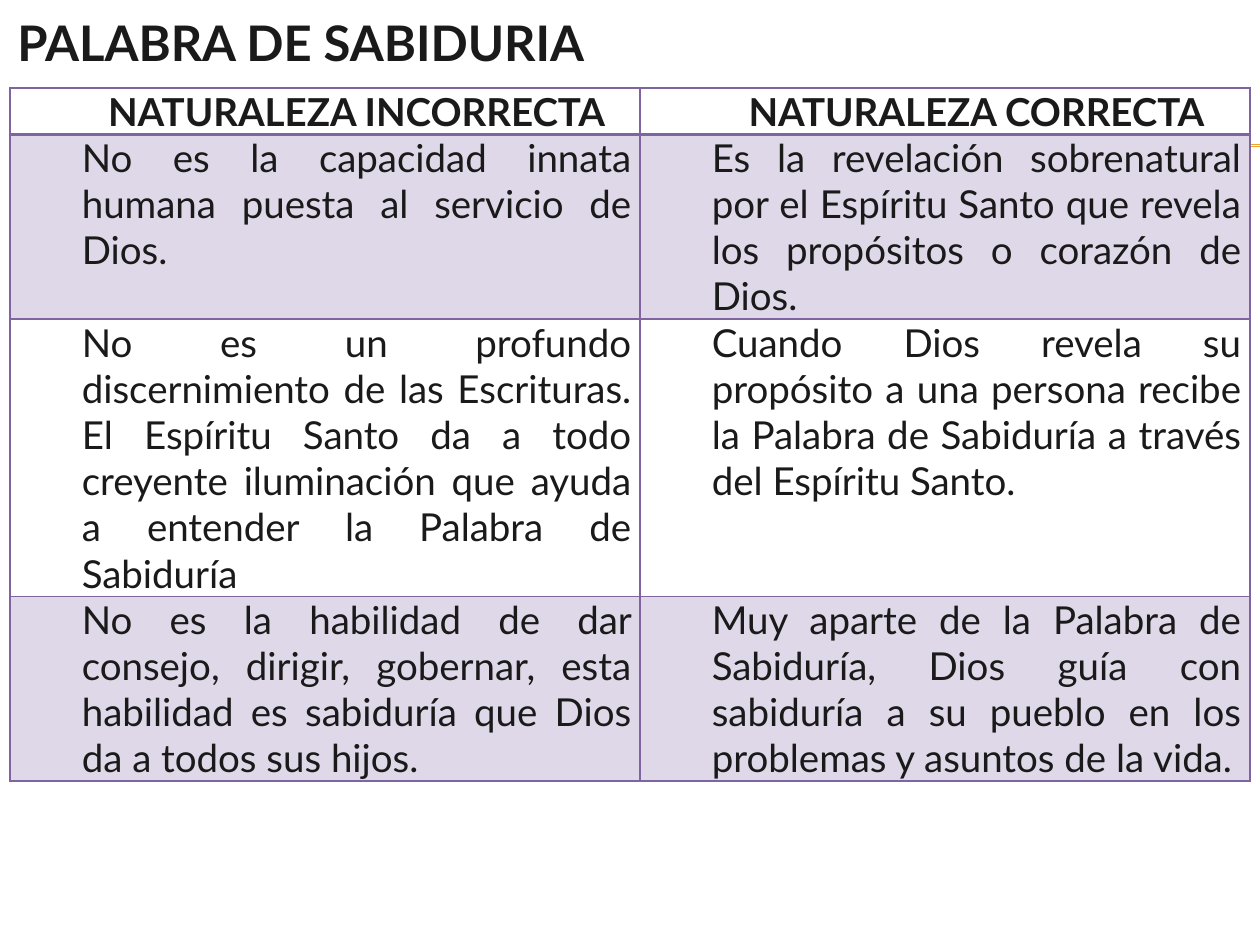
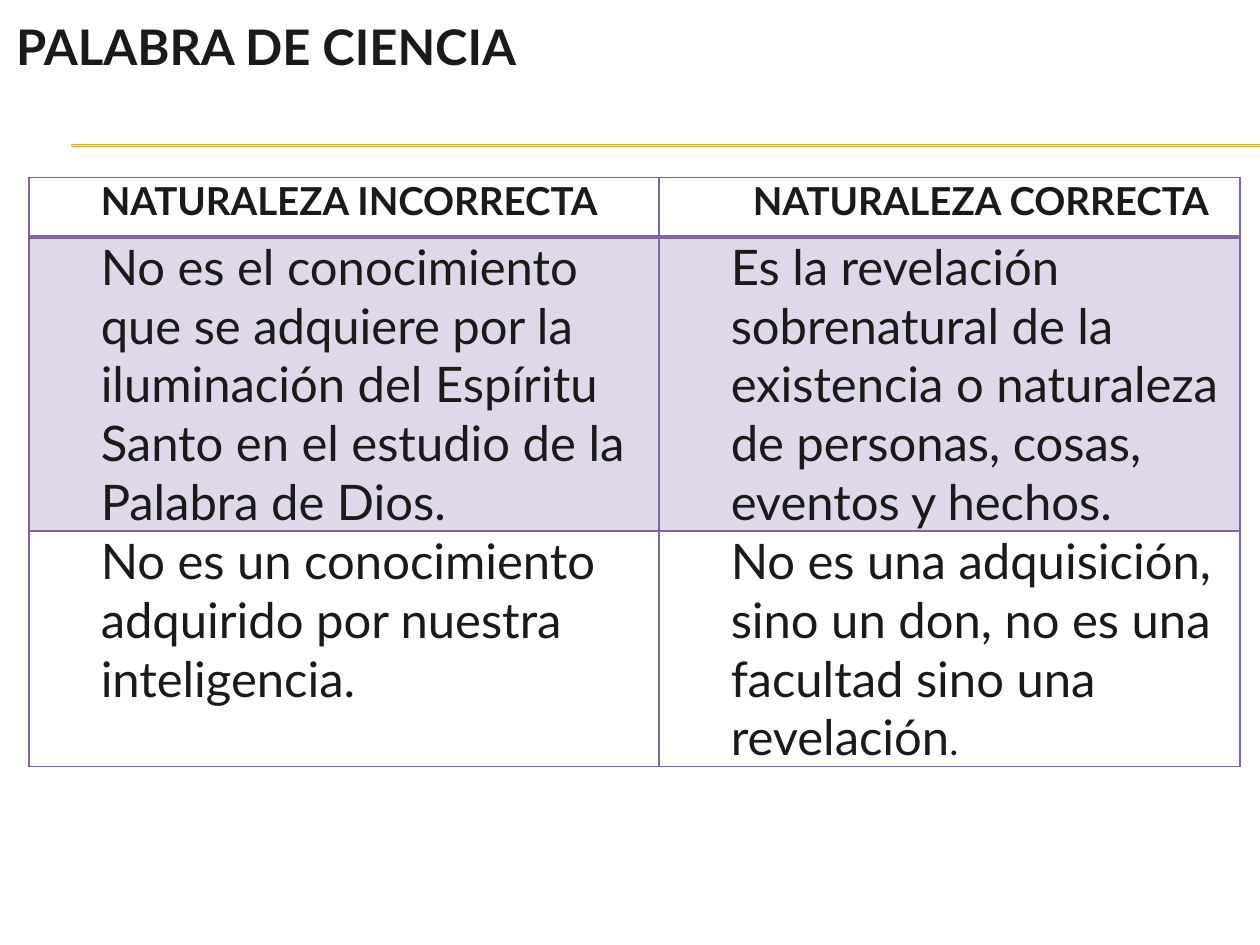
from lxml.etree import SubElement
from pptx import Presentation
from pptx.dml.color import RGBColor
from pptx.enum.shapes import MSO_CONNECTOR
from pptx.enum.text import MSO_ANCHOR, MSO_AUTO_SIZE, PP_ALIGN
from pptx.oxml.ns import qn
from pptx.util import Inches, Pt

INK = RGBColor(0x1A, 0x1A, 0x1A)
PURPLE = RGBColor(0x80, 0x64, 0xA2)
LILAC = RGBColor(0xDF, 0xD8, 0xE8)
AMBER = RGBColor(0xF0, 0xA2, 0x2E)
FONT = "Lato"
WIDTH, HEIGHT = Inches(10), Inches(7.5)
COLUMN, ROW = WIDTH / 100, HEIGHT / 100
TITLE_SIZE, HEADER_SIZE = 28, 22
THIN, THICK = Pt(1), Pt(2.25)
LEFT, CENTER, JUSTIFY = PP_ALIGN.LEFT, PP_ALIGN.CENTER, PP_ALIGN.JUSTIFY
HEADERS = ("NATURALEZA INCORRECTA", "NATURALEZA CORRECTA")


def grid(columns, rows):
    return round(columns * COLUMN), round(rows * ROW)


def line_height(size):
    return Pt(size * 1.2)


def add_text(para, text, size=HEADER_SIZE, bold=False, align=LEFT):
    para.alignment = align
    span = para.add_run()
    span.text = text
    span.font.name = FONT
    span.font.size = Pt(size)
    span.font.bold = bold
    span.font.color.rgb = INK


def add_rules(page):
    """Draw the double amber rule that runs off the right edge."""
    for row in (15.33, 15.47):
        rule = page.shapes.add_connector(
            MSO_CONNECTOR.STRAIGHT, *grid(5.6, row), *grid(100, row))
        rule.line.color.rgb = AMBER
        rule.line.width = Pt(0.75)
        SubElement(rule._element.spPr, qn("a:effectLst"))


def add_title(page, text, box):
    left, top, width, height = box
    shape = page.shapes.add_textbox(*grid(left, top), *grid(width, height))
    frame = shape.text_frame
    frame.word_wrap = False
    frame.auto_size = MSO_AUTO_SIZE.SHAPE_TO_FIT_TEXT
    frame.vertical_anchor = MSO_ANCHOR.MIDDLE
    add_text(frame.paragraphs[0], text, size=TITLE_SIZE, bold=True, align=JUSTIFY)


def set_borders(cell, top, bottom):
    properties = cell._tc.get_or_add_tcPr()
    for side, width in (("L", THIN), ("R", THIN), ("T", top), ("B", bottom)):
        edge = SubElement(properties, qn(f"a:ln{side}"), w=str(width))
        paint = SubElement(edge, qn("a:solidFill"))
        SubElement(paint, qn("a:srgbClr"), val=str(PURPLE))


def format_cell(cell, row):
    """Set insets, indent, borders and the lilac band of odd rows."""
    cell.margin_left = cell.margin_right = round(0.7 * COLUMN)
    cell.margin_top = cell.margin_bottom = 0
    indent = cell.text_frame.paragraphs[0]._p.get_or_add_pPr()
    indent.set("marL", str(round(5 * COLUMN)))
    indent.set("indent", "0")
    set_borders(cell, THICK if row == 1 else THIN, THICK if row == 0 else THIN)
    if row % 2:
        cell.fill.solid()
        cell.fill.fore_color.rgb = LILAC
    else:
        cell.fill.background()


def add_comparison(page, box, header_height, header_aligns, body, size, align, lines):
    """Fill a two-column table; lines counts the text lines of each body row."""
    left, top, width = box
    heights = [header_height] + [count * line_height(size) for count in lines]
    frame = page.shapes.add_table(
        len(heights), 2, *grid(left, top), round(width * COLUMN), sum(heights))
    table = frame.table
    table.first_row = table.horz_banding = False
    table.columns[0].width = round(50 * COLUMN)
    table.columns[1].width = round((width - 50) * COLUMN)
    for row, height in enumerate(heights):
        table.rows[row].height = height
    for column, (text, header_align) in enumerate(zip(HEADERS, header_aligns)):
        cell = table.cell(0, column)
        add_text(cell.text_frame.paragraphs[0], text, bold=True, align=header_align)
        format_cell(cell, 0)
    for row, texts in enumerate(body, start=1):
        for column, text in enumerate(texts):
            cell = table.cell(row, column)
            add_text(cell.text_frame.paragraphs[0], text, size=size, align=align)
            format_cell(cell, row)
    return table


def new_page(deck, title, title_box):
    page = deck.slides.add_slide(deck.slide_layouts[6])
    add_rules(page)
    add_title(page, title, title_box)
    return page


def build_wisdom(deck):
    page = new_page(deck, "PALABRA DE SABIDURIA", (0.4, 0.67, 50.4, 7.6))
    body = (
        ("No es la capacidad innata humana puesta al servicio de Dios. ",
         "Es la revelación sobrenatural por el Espíritu Santo que revela los "
         "propósitos o corazón de Dios."),
        ("No es un profundo discernimiento de las Escrituras. El Espíritu Santo da "
         "a todo creyente iluminación que ayuda a entender la Palabra de Sabiduría",
         "Cuando Dios revela su propósito a una persona recibe la Palabra de "
         "Sabiduría a través del Espíritu Santo."),
        ("No es la habilidad de dar consejo, dirigir, gobernar, esta habilidad es "
         "sabiduría que Dios da a todos sus hijos.",
         "Muy aparte de la Palabra de Sabiduría, Dios guía con sabiduría a su "
         "pueblo en los problemas y asuntos de la vida."),
    )
    add_comparison(page, (0.8, 9.33, 98.4), line_height(HEADER_SIZE),
                   (CENTER, CENTER), body, HEADER_SIZE, JUSTIFY, (4, 6, 4))


def build_knowledge(deck):
    page = new_page(deck, "PALABRA DE CIENCIA", (0.3, 1.07, 45.1, 7.6))
    body = (
        ("No es el conocimiento que se adquiere por la iluminación del Espíritu "
         "Santo en el estudio de la Palabra de Dios.",
         "Es la revelación sobrenatural de la existencia o naturaleza de personas, "
         "cosas, eventos y hechos."),
        ("No es un conocimiento adquirido por nuestra inteligencia.",
         "No es una adquisición, sino un don, no es una facultad sino una revelación"),
    )
    table = add_comparison(page, (2.3, 18.8, 96.1), round(6.27 * ROW),
                           (LEFT, CENTER), body, TITLE_SIZE, LEFT, (5, 4))
    add_text(table.cell(2, 1).text_frame.paragraphs[0], ".")


def main():
    deck = Presentation()
    deck.slide_width, deck.slide_height = WIDTH, HEIGHT
    build_wisdom(deck)
    build_knowledge(deck)
    deck.save("out.pptx")


if __name__ == "__main__":
    main()
